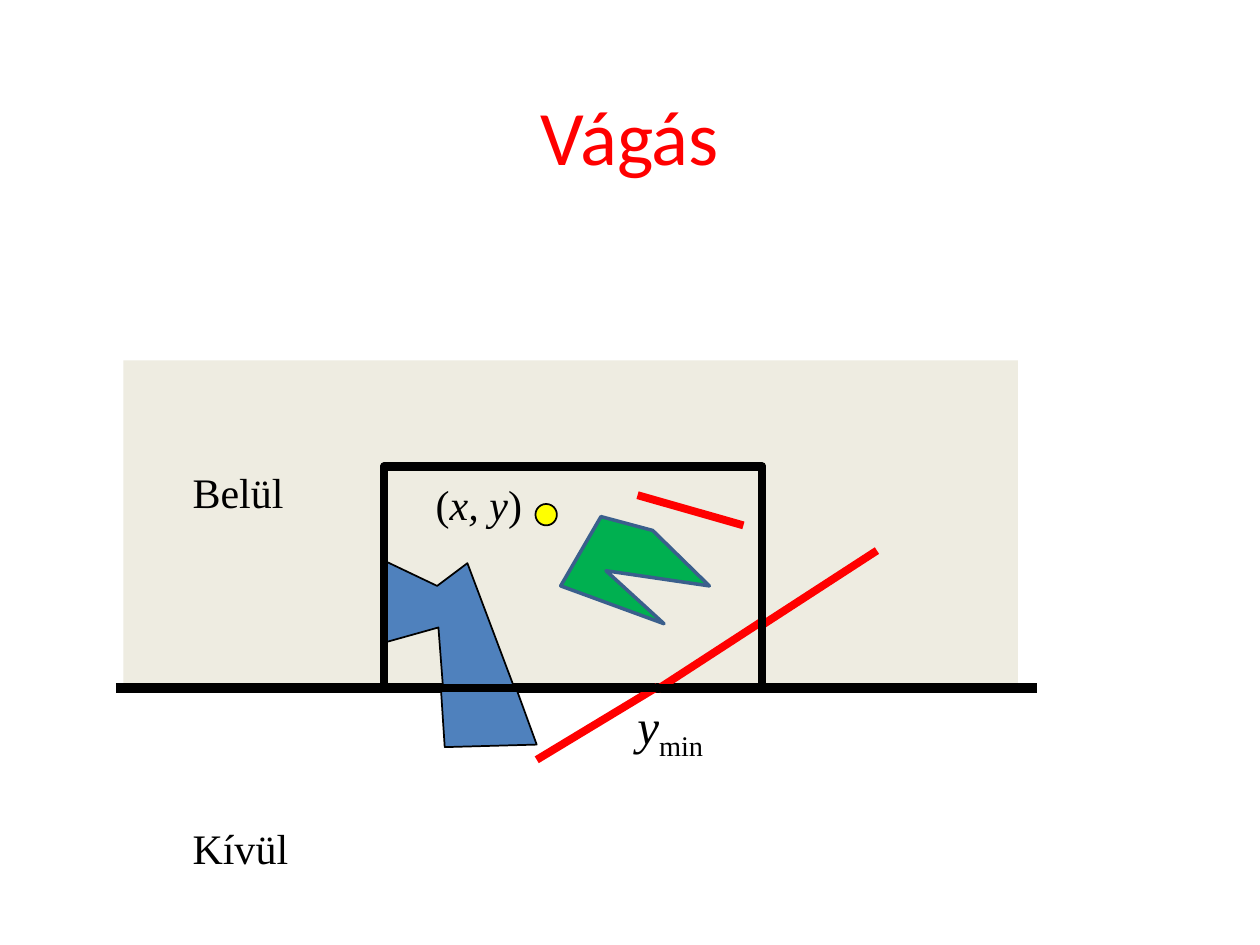
import pptx
import pptx.dml.color
import pptx.enum.shapes
import pptx.enum.text
import pptx.oxml.ns
import pptx.util
from lxml import etree

SCALE = 9144
BLACK, RED, BLUE = "000000", "FF0000", "4F81BD"
SHAPES = pptx.enum.shapes.MSO_SHAPE
SERIF = {"name": "Times New Roman", "size": pptx.util.Pt(24)}
SYMBOL = {**SERIF, "size": pptx.util.Pt(28)}
ITALIC = {"italic": True}


def emu(*lengths):
    """Turn px lengths into EMU."""
    return [pptx.util.Emu(length * SCALE) for length in lengths]


def color(value):
    """Turn a hex string into a colour."""
    return pptx.dml.color.RGBColor.from_string(value)


def paint(shape, fill=None, line=None, width=1):
    """Set the fill and outline of a shape, None meaning absent."""
    shape.shadow.inherit = False
    if fill:
        shape.fill.solid()
        shape.fill.fore_color.rgb = color(fill)
    else:
        shape.fill.background()
    if line:
        shape.line.color.rgb = color(line)
        shape.line.width = pptx.util.Pt(width)
    else:
        shape.line.fill.background()


def add_preset(page, origin, kind, at, **style):
    """Add a painted preset shape relative to the origin."""
    left, top, width, height = at
    place = emu(origin[0] + left, origin[1] + top, width, height)
    paint(page.shapes.add_shape(kind, *place), **style)


def add_polygon(page, origin, points, **style):
    """Add a painted closed polygon relative to the origin."""
    corners = [(origin[0] + x, origin[1] + y) for x, y in points]
    builder = page.shapes.build_freeform(*corners[0], scale=SCALE)
    builder.add_line_segments(corners[1:], close=True)
    paint(builder.convert_to_shape(), **style)


def add_line(page, origin, start, end, tint=RED, width=4.5):
    """Add a straight line relative to the origin."""
    ends = emu(*(base + offset for point in (start, end)
                 for base, offset in zip(origin, point)))
    line = page.shapes.add_connector(
        pptx.enum.shapes.MSO_CONNECTOR.STRAIGHT, *ends)
    line.line.color.rgb = color(tint)
    line.line.width = pptx.util.Pt(width)
    etree.SubElement(line._element.spPr, pptx.oxml.ns.qn("a:effectLst"))


def add_text(page, origin, at, spans, font=SERIF, tint=BLACK):
    """Add one line of text made of (wording, extra font values) spans."""
    left, top, width, height = at
    box = page.shapes.add_textbox(
        *emu(origin[0] + left, origin[1] + top, width, height))
    box.text_frame.word_wrap = False
    para = box.text_frame.paragraphs[0]
    for wording, extra in spans:
        span = para.add_run()
        span.text = wording
        for key, value in {**font, **extra}.items():
            setattr(span.font, key, value)
        span.font.color.rgb = color(tint)
    return box


def draw_title(page, left, top, width, height):
    """Place the centred slide title in its box."""
    font = {"name": "Calibri", "size": pptx.util.Pt(44)}
    box = add_text(page, (left, top), (0, 0, width, height),
                   [("Vágás", {})], font, RED)
    box.text_frame.word_wrap = True
    box.text_frame.vertical_anchor = pptx.enum.text.MSO_ANCHOR.MIDDLE
    box.text_frame.paragraphs[0].alignment = pptx.enum.text.PP_ALIGN.CENTER


def draw_half_plane(page, origin):
    """Place the inner half plane, its boundary and their labels."""
    add_preset(page, origin, SHAPES.RECTANGLE, (6, 0, 710, 261), fill="EEECE1")
    symbol = add_text(page, origin, (404, 261, 78, 57),
                      [("y", ITALIC), ("min", {})], SYMBOL)
    subscript = symbol.text_frame.paragraphs[0].runs[1]
    subscript._r.get_or_add_rPr().set("baseline", "-25000")
    add_line(page, origin, (0, 260), (731, 260), BLACK, 6)
    add_text(page, origin, (51, 79, 93, 51), [("Belül", {})])
    add_text(page, origin, (51, 362, 97, 51), [("Kívül", {})])


def draw_window(page, origin, top):
    """Place the clipping window with its top edge at the given height."""
    add_preset(page, origin, SHAPES.RECTANGLE, (213, top, 300, 175),
               line=BLACK, width=4.5)


def draw_clipped_objects(page, origin):
    """Place the polygon and the line that cross the boundary."""
    inner = [(213, 159), (213, 224), (256, 212), (260, 264),
             (317, 262), (279, 161), (255, 179)]
    outer = [(261, 307), (258, 261), (318, 261), (334, 305)]
    add_line(page, origin, (334, 317), (430, 259))
    for points in (inner, outer):
        add_polygon(page, origin, points, fill=BLUE, line=BLACK)
    add_line(page, origin, (604, 151), (513, 210))
    add_line(page, origin, (513, 207), (430, 261))


def draw_inner_objects(page, origin):
    """Place the point, line and polygon lying inside the window."""
    add_preset(page, origin, SHAPES.OVAL, (333, 114, 17, 17),
               fill="FFFF00", line=BLACK)
    add_text(page, origin, (244, 89, 89, 51),
             [("(", {}), ("x, y", ITALIC), (")", {})])
    add_line(page, origin, (498, 131), (414, 107))
    arrow = [(385, 124), (353, 179), (435, 209),
             (389, 167), (471, 179), (426, 135)]
    add_polygon(page, origin, arrow, fill="00B050", line="3A5F8C", width=2)


def draw_diagram(page, left, top):
    """Place the whole clipping diagram from its top left corner."""
    origin = (left, top)
    draw_half_plane(page, origin)
    draw_window(page, origin, 84)
    draw_clipped_objects(page, origin)
    draw_window(page, origin, 85)
    draw_inner_objects(page, origin)


def main():
    """Build and save the slide."""
    deck = pptx.Presentation()
    deck.slide_width, deck.slide_height = emu(1000, 750)
    page = deck.slides.add_slide(deck.slide_layouts[6])
    draw_title(page, 75, 44, 850, 125)
    draw_diagram(page, 92, 286)
    deck.save("out.pptx")


if __name__ == "__main__":
    main()
